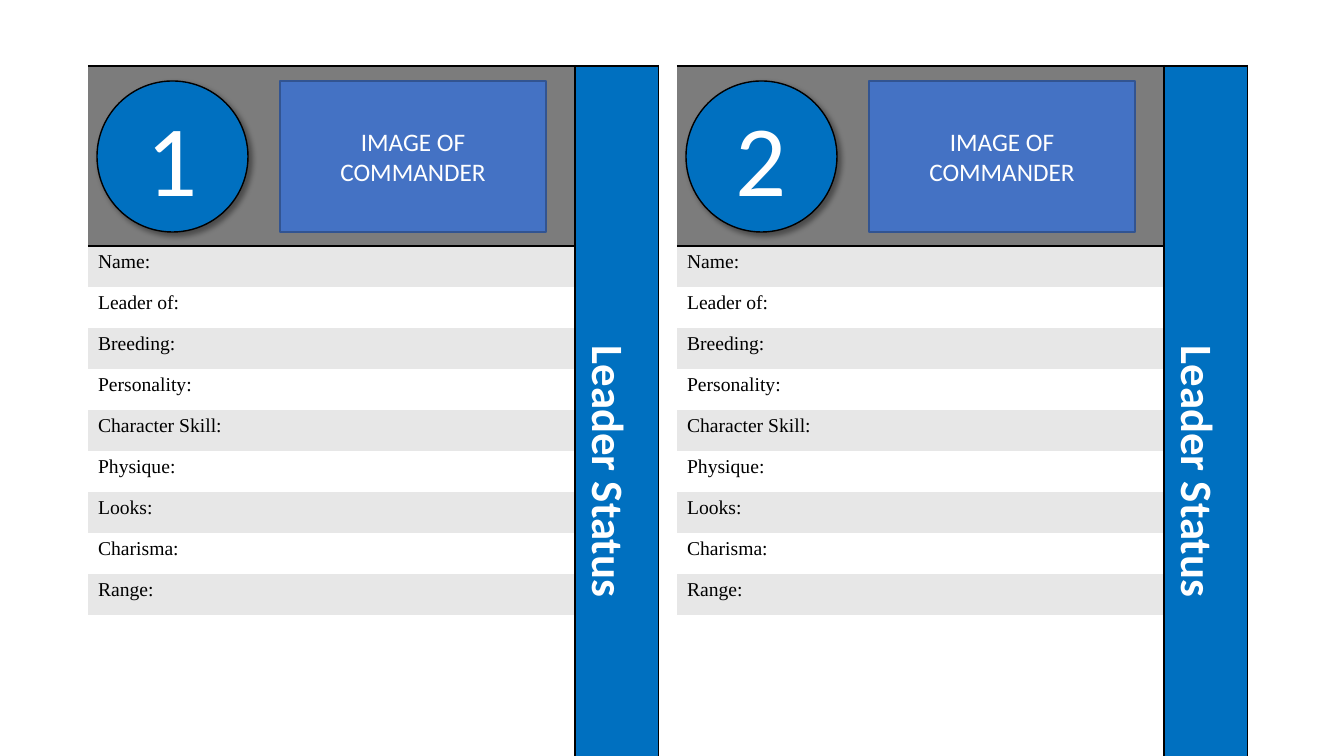
from lxml.etree import SubElement
from pptx import Presentation
from pptx.dml.color import RGBColor
from pptx.enum.shapes import MSO_SHAPE
from pptx.enum.text import MSO_ANCHOR, PP_ALIGN
from pptx.oxml import parse_xml
from pptx.oxml.ns import nsdecls, qn
from pptx.util import Emu, Pt

BLACK = RGBColor(0x00, 0x00, 0x00)
WHITE = RGBColor(0xFF, 0xFF, 0xFF)
GRAY = RGBColor(0x7C, 0x7C, 0x7C)
BAND = RGBColor(0xE7, 0xE7, 0xE7)
BLUE = RGBColor(0x00, 0x70, 0xC0)
IMAGE_BLUE = RGBColor(0x44, 0x72, 0xC4)
IMAGE_EDGE = RGBColor(0x32, 0x54, 0x91)

PLAIN_STYLE = "{2D5ABB26-0587-4C30-8999-92F81FD0307C}"
LABELS = ["Name:", "Leader of:", "Breeding:", "Personality:", "Character Skill:",
          "Physique:", "Looks:", "Charisma:", "Range:"]
COLUMN_WIDTHS = [166, 321, 84]
HEADER_HEIGHT = 180
ROW_HEIGHT = 41
CARD_LEFT = 88
CARD_TOP = 66
CARD_PITCH = 589


def px(length):
    return Emu(length * 9144000 // 1008)


def format_text(paragraph, font, size, color, bold=False, align=None):
    paragraph.alignment = align
    for span in paragraph.runs:
        span.font.name = font
        span.font.size = Pt(size)
        span.font.bold = bold
        span.font.color.rgb = color


def set_cell(cell, fill, **borders):
    properties = cell._tc.get_or_add_tcPr()
    for side in "LRTB":
        if side in borders:
            line = SubElement(properties, qn(f"a:ln{side}"), w=str(Pt(borders[side])))
            SubElement(SubElement(line, qn("a:solidFill")), qn("a:srgbClr"), val=str(BLACK))
    cell.fill.solid()
    cell.fill.fore_color.rgb = fill


def add_status_table(slide, left):
    row_heights = [HEADER_HEIGHT] + [ROW_HEIGHT] * (len(LABELS) + 1)
    table = slide.shapes.add_table(
        len(row_heights), len(COLUMN_WIDTHS), px(left), px(CARD_TOP),
        px(sum(COLUMN_WIDTHS)), px(sum(row_heights))).table
    table.first_row = False
    table.horz_banding = False
    table._tbl.tblPr.find(qn("a:tableStyleId")).text = PLAIN_STYLE
    for column, width in zip(table.columns, COLUMN_WIDTHS):
        column.width = px(width)
    for row, height in zip(table.rows, row_heights):
        row.height = px(height)

    last = len(row_heights) - 1
    for row in (0, last):
        table.cell(row, 0).merge(table.cell(row, 1))
    table.cell(0, 2).merge(table.cell(last, 2))

    for column in (0, 1):
        edge = {"R": 1} if column else {}
        set_cell(table.cell(0, column), GRAY, T=2, B=2, **edge)
        for row in range(1, last):
            set_cell(table.cell(row, column), BAND if row % 2 else WHITE, **edge)
        set_cell(table.cell(last, column), WHITE, B=2, **edge)

    for row, label in enumerate(LABELS, start=1):
        paragraph = table.cell(row, 0).text_frame.paragraphs[0]
        paragraph.text = label
        format_text(paragraph, "Times New Roman", 14, BLACK)

    status = table.cell(0, 2)
    set_cell(status, BLUE, L=1, T=2, B=2)
    status._tc.get_or_add_tcPr().set("vert", "vert")
    status.vertical_anchor = MSO_ANCHOR.MIDDLE
    status.text_frame.text = "Leader Status"
    format_text(status.text_frame.paragraphs[0], "Calibri", 32, WHITE, True, PP_ALIGN.CENTER)


def add_label_shape(slide, kind, left, width, text, size, fill, edge):
    shape = slide.shapes.add_shape(kind, px(left), px(81), px(width), px(151))
    shape.shadow.inherit = False
    shape.fill.solid()
    shape.fill.fore_color.rgb = fill
    shape.line.color.rgb = edge
    shape.line.width = Pt(1)
    frame = shape.text_frame
    frame.word_wrap = True
    frame.vertical_anchor = MSO_ANCHOR.MIDDLE
    frame.text = text
    format_text(frame.paragraphs[0], "Calibri", size, WHITE, align=PP_ALIGN.CENTER)
    return shape


def add_drop_shadow(shape):
    effects = shape._element.spPr.find(qn("a:effectLst"))
    effects.append(parse_xml(
        f'<a:outerShdw {nsdecls("a")} blurRad="{Pt(4)}" dist="{Pt(3)}" dir="2700000" '
        f'algn="tl" rotWithShape="0"><a:srgbClr val="{BLACK}">'
        '<a:alpha val="40000"/></a:srgbClr></a:outerShdw>'))


def add_commander_card(slide, number):
    left = CARD_LEFT + (number - 1) * CARD_PITCH
    add_status_table(slide, left)
    badge = add_label_shape(slide, MSO_SHAPE.OVAL, left + 9, 151, str(number), 72, BLUE, BLACK)
    add_drop_shadow(badge)
    add_label_shape(slide, MSO_SHAPE.RECTANGLE, left + 192, 266, "IMAGE OF COMMANDER", 18,
                    IMAGE_BLUE, IMAGE_EDGE)


def main():
    deck = Presentation()
    deck.slide_width = px(1344)
    deck.slide_height = px(756)
    slide = deck.slides.add_slide(deck.slide_layouts[6])
    for number in (1, 2):
        add_commander_card(slide, number)
    deck.save("out.pptx")


if __name__ == "__main__":
    main()
